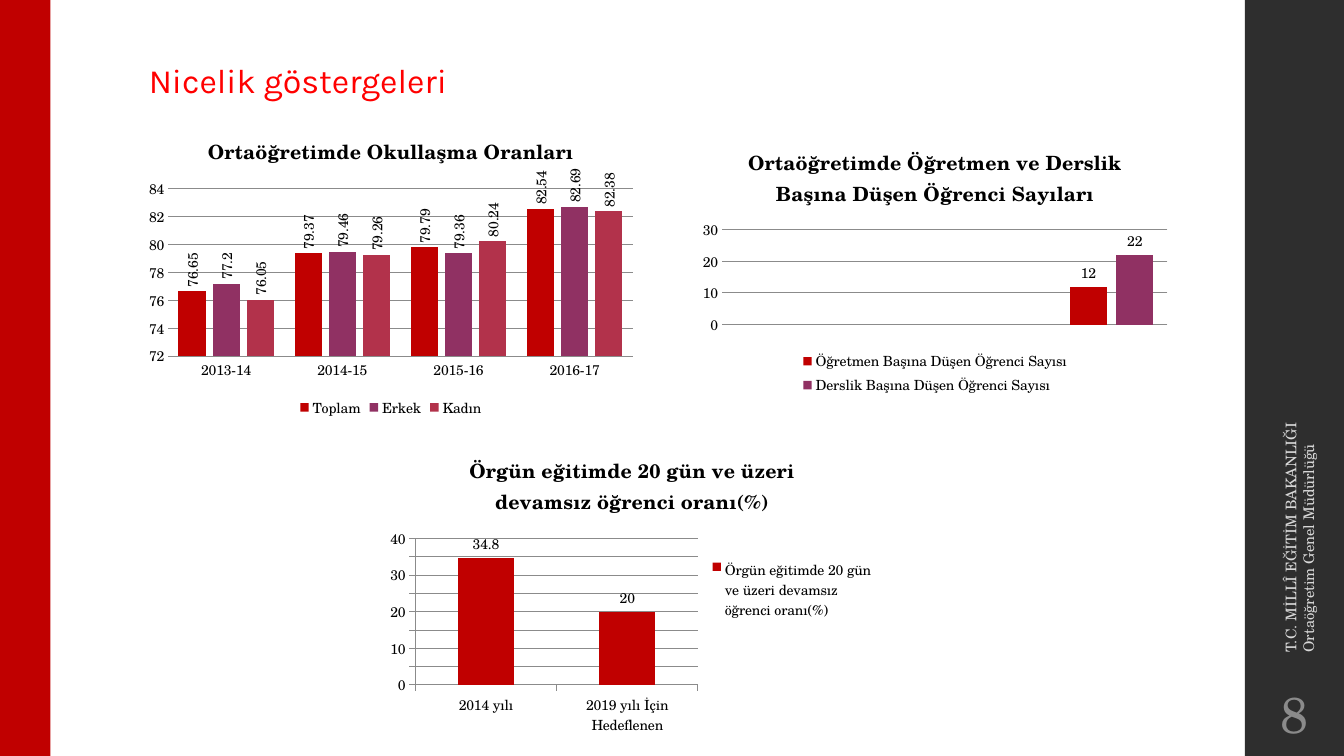
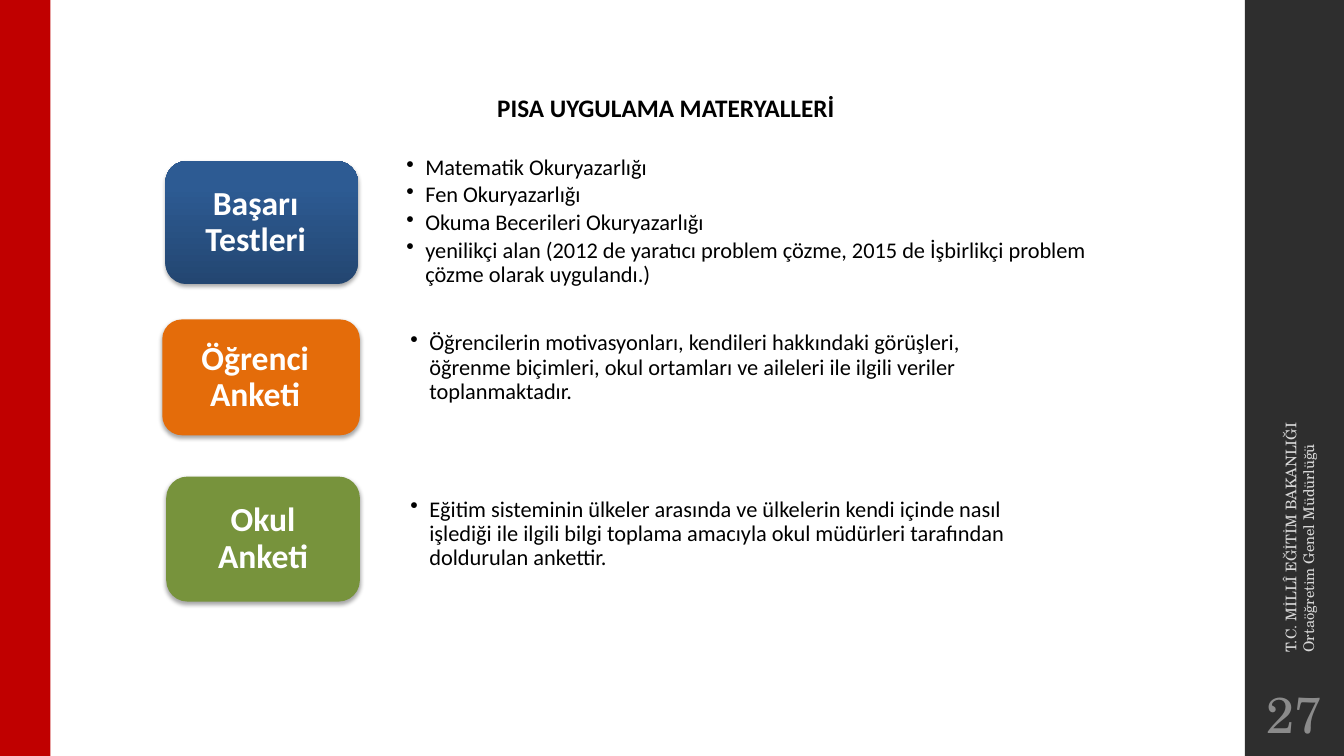
from lxml.etree import SubElement
from pptx import Presentation
from pptx.chart.data import CategoryChartData
from pptx.dml.color import RGBColor
from pptx.enum.chart import (XL_CHART_TYPE as ChartType, XL_LABEL_POSITION as LabelPosition,
                             XL_LEGEND_POSITION as LegendPosition, XL_TICK_MARK as TickMark)
from pptx.enum.shapes import MSO_SHAPE as Shape
from pptx.enum.text import MSO_ANCHOR as Anchor, PP_ALIGN as Align
from pptx.oxml.ns import qn
from pptx.util import Cm, Pt

WIDTH, HEIGHT = 33.87, 19.05
SERIF, SANS, HEADING = "TeX Gyre Schola", "Calibri", "Karla"
BLACK, WHITE, RED, GRID = "000000", "FFFFFF", "C00000", "8B8B8B"
SERIES_COLOURS = [RED, "903163", "B2324B"]
SIDE_LEFT, SIDE_WIDTH = 31.37, 2.5
CONTENT_LEFT, CONTENT_WIDTH = 3.5, 26.16


def colour(hex_string):
    return RGBColor.from_string(hex_string)


def lengths(box):
    return [Cm(value) for value in box]


# Text
def set_font(font, size, name, hex_string, bold=False):
    font.size, font.name, font.bold = Pt(size), name, bold
    font.color.rgb = colour(hex_string)


def add_bullet(paragraph, indent):
    properties = paragraph._p.get_or_add_pPr()
    properties.set("marL", str(Cm(indent)))
    properties.set("indent", str(-Cm(indent)))
    SubElement(properties, qn("a:buChar")).set("char", "•")


def write(shape, lines, size, font, hex_string, bold=False, align=Align.LEFT,
          anchor=Anchor.MIDDLE, insets=(0.25, 0.13, 0.25, 0.13), spacing=1.0,
          after=0, bullet=None):
    frame = shape.text_frame
    frame.word_wrap, frame.vertical_anchor = True, anchor
    (frame.margin_left, frame.margin_top,
     frame.margin_right, frame.margin_bottom) = lengths(insets)
    for index, line in enumerate(lines):
        paragraph = frame.add_paragraph() if index else frame.paragraphs[0]
        paragraph.alignment = align
        paragraph.line_spacing = spacing
        paragraph.space_after = Pt(after)
        if bullet:
            add_bullet(paragraph, bullet)
        run = paragraph.add_run()
        run.text = line
        set_font(run.font, size, font, hex_string, bold)


def add_text(slide, box, lines, **text_format):
    text_box = slide.shapes.add_textbox(*lengths(box))
    write(text_box, lines, **text_format)
    return text_box


# Shared slide parts
def add_band(slide, box, hex_string):
    band = slide.shapes.add_shape(Shape.RECTANGLE, *lengths(box))
    band.shadow.inherit = False
    band.fill.solid()
    band.fill.fore_color.rgb = colour(hex_string)
    band.line.fill.background()


def add_title(slide, box, title, **text_format):
    add_text(slide, box, [title], anchor=Anchor.BOTTOM, spacing=0.85, **text_format)


def add_base_slide(presentation, number):
    slide = presentation.slides.add_slide(presentation.slide_layouts[6])
    add_band(slide, (SIDE_LEFT, 0, SIDE_WIDTH, HEIGHT), "2E2E2E")
    add_band(slide, (0, 0, 1.27, HEIGHT), RED)
    ministry = add_text(slide, (26.7, 10.03, 12.09, 1.24),
                        ["T.C. MİLLÎ EĞİTİM BAKANLIĞI", "Ortaöğretim Genel Müdürlüğü"],
                        size=10.5, font=SERIF, hex_string="D8D8D8")
    ministry.rotation = 270
    add_text(slide, (SIDE_LEFT, 17.15, SIDE_WIDTH, 1.65), [str(number)], size=36,
             font=SERIF, hex_string=GRID, align=Align.CENTER, insets=(0.13,) * 4)
    return slide


# Charts
def style_line(line):
    line.color.rgb = colour(GRID)
    line.width = Pt(0.75)


def style_value_axis(axis, scale, ticks):
    axis.minimum_scale, axis.maximum_scale, axis.major_unit = scale
    axis.has_major_gridlines = True
    style_line(axis.major_gridlines.format.line)
    axis.major_tick_mark = ticks
    if ticks == TickMark.NONE:
        axis.format.line.fill.background()
    else:
        style_line(axis.format.line)


def style_series(series, hex_string, rotate):
    series.format.fill.solid()
    series.format.fill.fore_color.rgb = colour(hex_string)
    series.invert_if_negative = False
    labels = series.data_labels
    labels.show_value = True
    labels.position = LabelPosition.OUTSIDE_END
    set_font(labels.font, 10, SERIF, BLACK)
    if rotate:
        body = labels._element.find(".//" + qn("a:bodyPr"))
        body.set("rot", "-5400000")
        body.set("vert", "horz")


def add_column_chart(slide, box, title, categories, series, scale, gap=75, overlap=-25,
                     ticks=TickMark.NONE, legend=LegendPosition.BOTTOM,
                     rotate=False, show_categories=True):
    data = CategoryChartData()
    data.categories = categories
    for name, values in series:
        data.add_series(name, values)
    chart = slide.shapes.add_chart(ChartType.COLUMN_CLUSTERED, *lengths(box), data).chart
    set_font(chart.font, 10, SERIF, BLACK)
    chart.has_title = True
    heading = chart.chart_title.text_frame
    heading.text = title
    set_font(heading.paragraphs[0].runs[0].font, 14, SERIF, BLACK, bold=True)
    chart.chart_title.include_in_layout = False
    chart.has_legend = True
    chart.legend.position = legend
    chart.legend.include_in_layout = False
    style_value_axis(chart.value_axis, scale, ticks)
    chart.category_axis.visible = show_categories
    chart.category_axis.major_tick_mark = ticks
    style_line(chart.category_axis.format.line)
    plot = chart.plots[0]
    plot.vary_by_categories = False
    plot.gap_width, plot.overlap = gap, overlap
    for item, hex_string in zip(plot.series, SERIES_COLOURS):
        style_series(item, hex_string, rotate)


def build_indicators(presentation):
    slide = add_base_slide(presentation, 8)
    add_title(slide, (CONTENT_LEFT, 1.57, CONTENT_WIDTH, 1.1), "Nicelik göstergeleri",
              size=24.3, font=HEADING, hex_string="FF0000")
    add_column_chart(
        slide, (CONTENT_LEFT, 3, 12.7, 7.62), "Ortaöğretimde Okullaşma Oranları",
        ["2013-14", "2014-15", "2015-16", "2016-17"],
        [("Toplam", (76.65, 79.37, 79.79, 82.54)),
         ("Erkek", (77.2, 79.46, 79.36, 82.69)),
         ("Kadın", (76.05, 79.26, 80.24, 82.38))],
        scale=(72, 84, 2), rotate=True)
    add_column_chart(
        slide, (17.47, 3.3, 12.19, 6.76),
        "Ortaöğretimde Öğretmen ve Derslik Başına Düşen Öğrenci Sayıları",
        ["1", "2", "3", "4"],
        [("Öğretmen Başına Düşen Öğrenci Sayısı", (None, None, None, 12)),
         ("Derslik Başına Düşen Öğrenci Sayısı", (None, None, None, 22))],
        scale=(0, 30, 10), show_categories=False)
    absence = "Örgün eğitimde 20 gün ve üzeri devamsız öğrenci oranı(%)"
    add_column_chart(
        slide, (9.58, 11.05, 12.7, 7.62), absence,
        ["2014 yılı", "2019 yılı İçin Hedeflenen"], [(absence, (34.8, 20))],
        scale=(0, 40, 5), gap=150, overlap=0, ticks=TickMark.OUTSIDE,
        legend=LegendPosition.RIGHT)


# Survey cards
def add_soft_shadow(shape):
    shape.shadow.inherit = False
    effects = shape._element.spPr.find(qn("a:effectLst"))
    shadow = SubElement(effects, qn("a:outerShdw"), blurRad=str(Pt(3.1)),
                        dist=str(Pt(1.8)), dir="5400000", rotWithShape="0")
    black = SubElement(shadow, qn("a:srgbClr"), val=BLACK)
    SubElement(black, qn("a:alpha"), val="35000")


def fill_card(fill, colours):
    if len(colours) == 1:
        fill.solid()
        fill.fore_color.rgb = colour(colours[0])
        return
    fill.gradient()
    fill.gradient_angle = 90
    for stop, hex_string, position in zip(fill.gradient_stops, colours, (0, 0.8)):
        stop.color.rgb = colour(hex_string)
        stop.position = position


def add_material(slide, card_box, label, colours, text_box, points, shift=0):
    card = slide.shapes.add_shape(Shape.ROUNDED_RECTANGLE, *lengths(card_box))
    card.adjustments[0] = 0.17
    card.line.fill.background()
    fill_card(card.fill, colours)
    add_soft_shadow(card)
    write(card, [label], size=24, font=SANS, hex_string=WHITE, bold=True,
          align=Align.CENTER, insets=(0.5, 0.25, 0.5 + shift, 0.25), spacing=0.9)
    add_text(slide, text_box, points, size=16, font=SANS, hex_string=BLACK,
             insets=(0.18,) * 4, spacing=0.9, after=2.4, bullet=0.48)


def build_materials(presentation):
    slide = add_base_slide(presentation, 27)
    add_title(slide, (CONTENT_LEFT + 0.2, 2.1, CONTENT_WIDTH, 1.12),
              "PISA UYGULAMA MATERYALLERİ", size=18, font=SANS, hex_string=BLACK,
              bold=True, align=Align.CENTER)
    add_material(
        slide, (4.17, 4.06, 4.85, 3.1), "Başarı Testleri", ["234671", "2D5B93"],
        (10.06, 3.86, 18.8, 3.45),
        ["Matematik Okuryazarlığı", "Fen Okuryazarlığı", "Okuma Becerileri Okuryazarlığı",
         "yenilikçi alan (2012 de yaratıcı problem çözme, 2015 de İşbirlikçi problem "
         "çözme olarak uygulandı.)"], shift=0.3)
    add_material(
        slide, (4.09, 8.05, 4.98, 2.92), "Öğrenci Anketi", ["E46C0A"],
        (10.16, 8.0, 16.2, 2.54),
        ["Öğrencilerin motivasyonları, kendileri hakkındaki görüşleri, öğrenme biçimleri, "
         "okul ortamları ve aileleri ile ilgili veriler toplanmaktadır."], shift=0.3)
    add_material(
        slide, (4.19, 12.01, 4.88, 3.15), "Okul Anketi", ["77933C"],
        (10.16, 12.19, 16.43, 2.54),
        ["Eğitim sisteminin ülkeler arasında ve ülkelerin kendi içinde nasıl işlediği ile "
         "ilgili bilgi toplama amacıyla okul müdürleri tarafından doldurulan ankettir."])


def main():
    presentation = Presentation()
    presentation.slide_width, presentation.slide_height = Cm(WIDTH), Cm(HEIGHT)
    build_indicators(presentation)
    build_materials(presentation)
    presentation.save("out.pptx")


if __name__ == "__main__":
    main()
